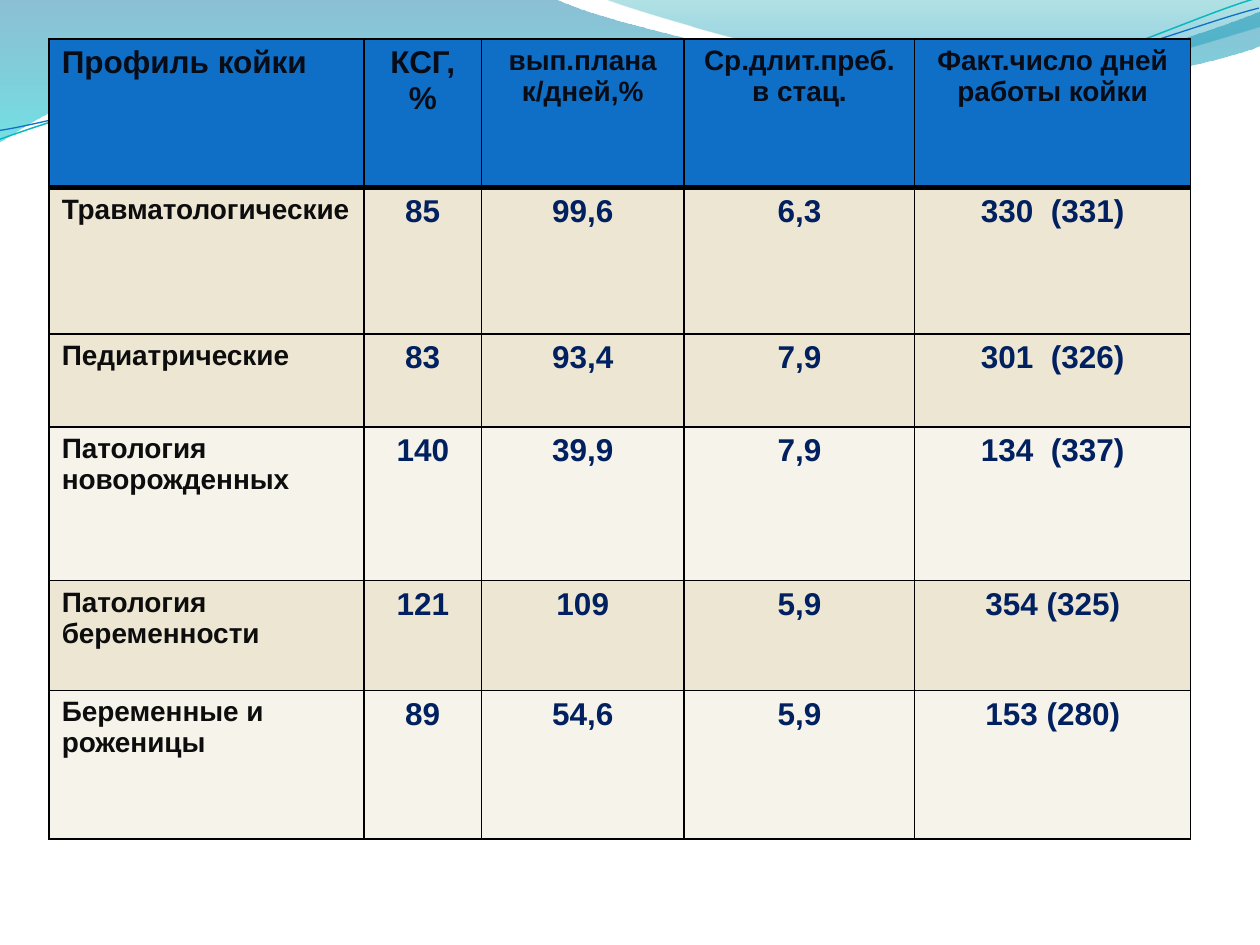
from dataclasses import dataclass

from lxml import etree
from pptx import Presentation
from pptx.dml.color import RGBColor
from pptx.enum.text import PP_ALIGN
from pptx.oxml import parse_xml
from pptx.util import Pt

LEFT, CENTER = PP_ALIGN.LEFT, PP_ALIGN.CENTER
PX = 9144  # 100 px to the inch
NS = "http://schemas.openxmlformats.org/drawingml/2006/main"
TILT = 357.3


@dataclass(frozen=True)
class Theme:
    font: str = "Arial"
    big: int = 18
    small: int = 16
    head: str = "0F6FC6"
    title: str = "070C17"
    label: str = "0D0D0D"
    value: str = "002060"
    dark: str = "EDE6D3"
    light: str = "F6F3EA"
    edge: str = "000000"
    teal: str = "0AB8BF"
    wave: tuple = ((0, "0074A1", 45), (100, "00C6CF", 55))
    crest: tuple = ((0, "00A1A9", 30), (80, "008BBF", 45))


class Painter:
    def __init__(self, slide, theme):
        self.slide = slide
        self.theme = theme

    def outline(self, start, parts, close):
        """A part is one line end, or three points of a Bezier curve."""
        pen = self.slide.shapes.build_freeform(*start, scale=PX)
        pen.add_line_segments([spot for part in parts for spot in part], close)
        shape = pen.convert_to_shape()
        shape.shadow.inherit = False
        lines = list(shape._element.iter(f"{{{NS}}}lnTo"))
        for part in parts:
            group, lines = lines[:len(part)], lines[len(part):]
            if len(part) == 3:
                bend = etree.Element(f"{{{NS}}}cubicBezTo")
                group[0].addprevious(bend)
                for line in group:
                    bend.append(line[0])
                    line.getparent().remove(line)
        return shape

    def band(self, start, parts, stops):
        shape = self.outline(start, parts, True)
        shape.line.fill.background()
        marks = "".join(
            f'<a:gs pos="{at * 1000}"><a:srgbClr val="{color}">'
            f'<a:alpha val="{alpha * 1000}"/></a:srgbClr></a:gs>'
            for at, color, alpha in stops)
        shape.fill.gradient()
        old = shape._element.spPr.find(f"{{{NS}}}gradFill")
        old.getparent().replace(old, parse_xml(
            f'<a:gradFill xmlns:a="{NS}"><a:gsLst>{marks}</a:gsLst>'
            '<a:lin ang="5400000" scaled="0"/></a:gradFill>'))

    def curve(self, start, parts, color, width):
        shape = self.outline(start, parts, False)
        shape.rotation = TILT
        shape.fill.background()
        shape.line.color.rgb = RGBColor.from_string(color)
        shape.line.width = Pt(width)

    def border(self, cell, widths):
        props = cell._tc.get_or_add_tcPr()
        for spot, (side, width) in enumerate(zip("LRTB", widths)):
            line = etree.Element(f"{{{NS}}}ln{side}", w=str(Pt(width)))
            fill = etree.SubElement(line, f"{{{NS}}}solidFill")
            etree.SubElement(fill, f"{{{NS}}}srgbClr", val=self.theme.edge)
            props.insert(spot, line)

    def cell(self, cell, text, fill, color, size, align):
        cell.fill.solid()
        cell.fill.fore_color.rgb = RGBColor.from_string(fill)
        cell.text = text
        for para in cell.text_frame.paragraphs:
            para.alignment = align
            para.font.name = self.theme.font
            para.font.size = Pt(size)
            para.font.bold = True
            para.font.color.rgb = RGBColor.from_string(color)

    def table(self, left, top, cols, rows, data, fills):
        theme = self.theme
        table = self.slide.shapes.add_table(
            len(rows), len(cols), left * PX, top * PX,
            sum(cols) * PX, sum(rows) * PX).table
        table.first_row = table.horz_banding = False
        for col, width in zip(table.columns, cols):
            col.width = width * PX
        for row, height in zip(table.rows, rows):
            row.height = height * PX
        for r, (line, fill) in enumerate(zip(data, fills)):
            for c, text in enumerate(line):
                if r == 0:
                    color = theme.title
                    size = theme.big if c < 2 else theme.small
                elif c == 0:
                    color, size = theme.label, theme.small
                else:
                    color, size = theme.value, theme.big
                cell = table.cell(r, c)
                self.cell(cell, text, fill, color, size, CENTER if c else LEFT)
                self.border(cell, (1, 1, 3 if r == 1 else 1, 3 if r == 0 else 1))


DATA = (
    ("Профиль койки", "КСГ,%", "вып.плана к/дней,%", "Ср.длит.преб.в стац.",
     "Факт.число дней работы койки"),
    ("Травматологические", "85", "99,6", "6,3", "330  (331)"),
    ("Педиатрические", "83", "93,4", "7,9", "301  (326)"),
    ("Патология\nноворожденных", "140", "39,9", "7,9", "134  (337)"),
    ("Патология беременности", "121", "109", "5,9", "354 (325)"),
    ("Беременные и роженицы", "89", "54,6", "5,9", "153 (280)"),
)


def main():
    deck = Presentation()
    deck.slide_width, deck.slide_height = 1000 * PX, 750 * PX
    theme = Theme()
    art = Painter(deck.slides.add_slide(deck.slide_layouts[6]), theme)

    art.band((0, 0), (
        ((440, -1),),
        ((476, 17), (664, 63), (758, 63)),
        ((853, 63), (958, 26), (1000, 9)),
        ((1001, 36),),
        ((983, 44), (870, 76), (746, 75)),
        ((622, 75), (382, 28), (257, 34)),
        ((129, 36), (46, 83), (-1, 113)),
    ), theme.wave)
    art.band((479, -1), (
        ((509, 11), (682, 62), (769, 65)),
        ((856, 69), (961, 32), (1000, 21)),
        ((1000, 0),),
    ), theme.crest)
    art.curve((-2, 87), (
        ((47, 72), (158, 41), (277, 42)),
        ((396, 42), (591, 93), (712, 90)),
        ((832, 87), (940, 36), (1000, 22)),
    ), theme.teal, 0.85)
    art.curve((-2, 80), (
        ((46, 75), (164, 45), (283, 46)),
        ((403, 46), (596, 88), (716, 85)),
        ((835, 83), (942, 42), (1001, 30)),
    ), theme.head, 0.75)

    art.table(39, 31, (250, 93, 161, 183, 219), (118, 116, 74, 122, 87, 118),
              DATA, (theme.head, theme.dark, theme.dark, theme.light,
                     theme.dark, theme.light))
    deck.save("out.pptx")


if __name__ == "__main__":
    main()
